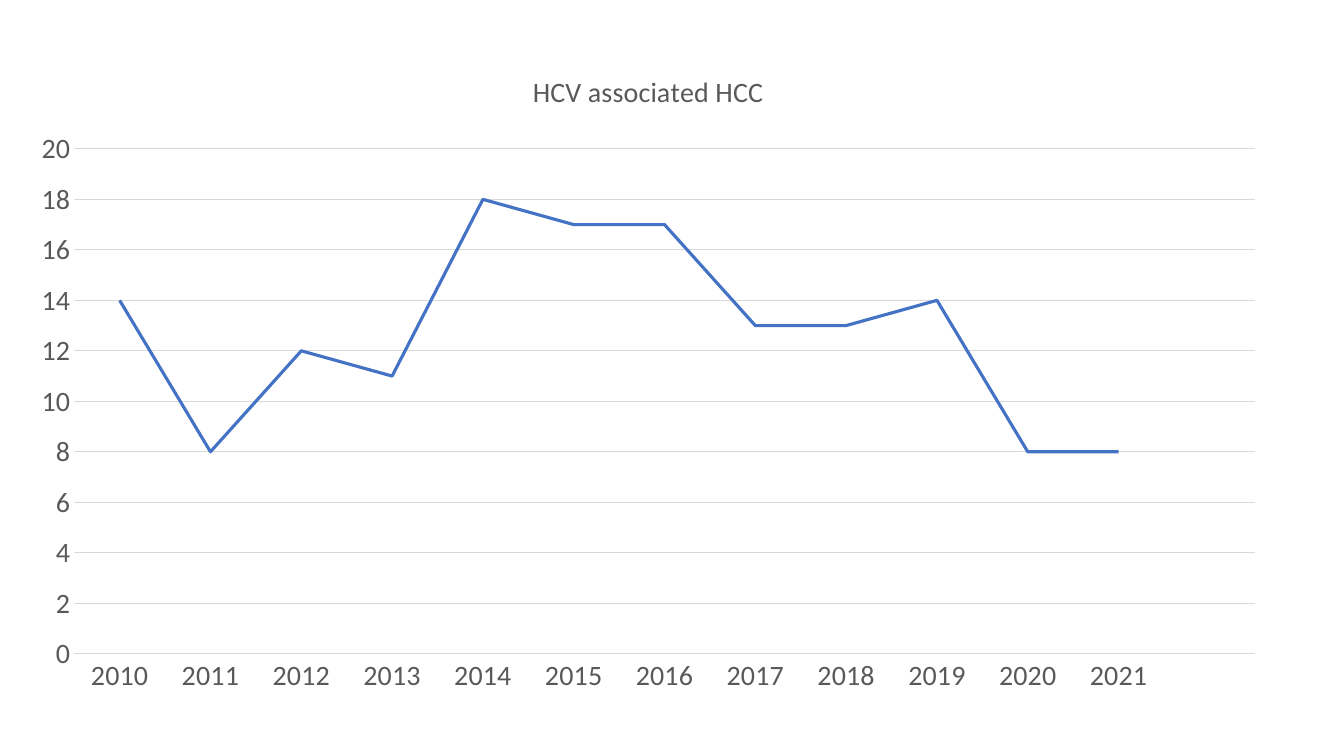
from pptx import Presentation
from pptx.chart.data import CategoryChartData
from pptx.dml.color import RGBColor
from pptx.enum.chart import XL_CHART_TYPE, XL_MARKER_STYLE, XL_TICK_MARK
from pptx.util import Cm, Pt

BLUE = RGBColor(0x44, 0x72, 0xC4)
GREY = RGBColor(0x59, 0x59, 0x59)
LIGHT_GREY = RGBColor(0xD9, 0xD9, 0xD9)

TITLE = "HCV associated HCC"
CASES = [14, 8, 12, 11, 18, 17, 17, 13, 13, 14, 8, 8]
FIRST_YEAR = 2010


def style_font(font):
    font.name = "Calibri"
    font.size = Pt(20)
    font.bold = False
    font.color.rgb = GREY


deck = Presentation()
deck.slide_width = Cm(33.87)
deck.slide_height = Cm(19.05)
page = deck.slides.add_slide(deck.slide_layouts[6])

# The axis ends with one unlabelled, empty category.
chart_data = CategoryChartData()
chart_data.categories = [str(FIRST_YEAR + i) for i in range(len(CASES))] + [""]
chart_data.add_series(TITLE, CASES + [None])
chart = page.shapes.add_chart(
    XL_CHART_TYPE.LINE, Cm(0.41), Cm(1.22), Cm(31.85), Cm(16.56), chart_data
).chart
chart.has_legend = False
style_font(chart.font)

chart.has_title = True
chart.chart_title.include_in_layout = False
title_frame = chart.chart_title.text_frame
title_frame.text = TITLE
style_font(title_frame.paragraphs[0].font)

for axis in (chart.category_axis, chart.value_axis):
    axis.major_tick_mark = XL_TICK_MARK.NONE
    axis.minor_tick_mark = XL_TICK_MARK.NONE
    style_font(axis.tick_labels.font)

year_line = chart.category_axis.format.line
year_line.color.rgb = LIGHT_GREY
year_line.width = Pt(0.75)

case_axis = chart.value_axis
case_axis.minimum_scale = 0
case_axis.maximum_scale = 20
case_axis.major_unit = 2
case_axis.format.line.fill.background()
case_axis.has_major_gridlines = True
grid_line = case_axis.major_gridlines.format.line
grid_line.color.rgb = LIGHT_GREY
grid_line.width = Pt(0.75)

plot = chart.plots[0]
plot.vary_by_categories = False
series = plot.series[0]
series.smooth = False
series.marker.style = XL_MARKER_STYLE.NONE
series.format.line.color.rgb = BLUE
series.format.line.width = Pt(2.25)

deck.save("out.pptx")
